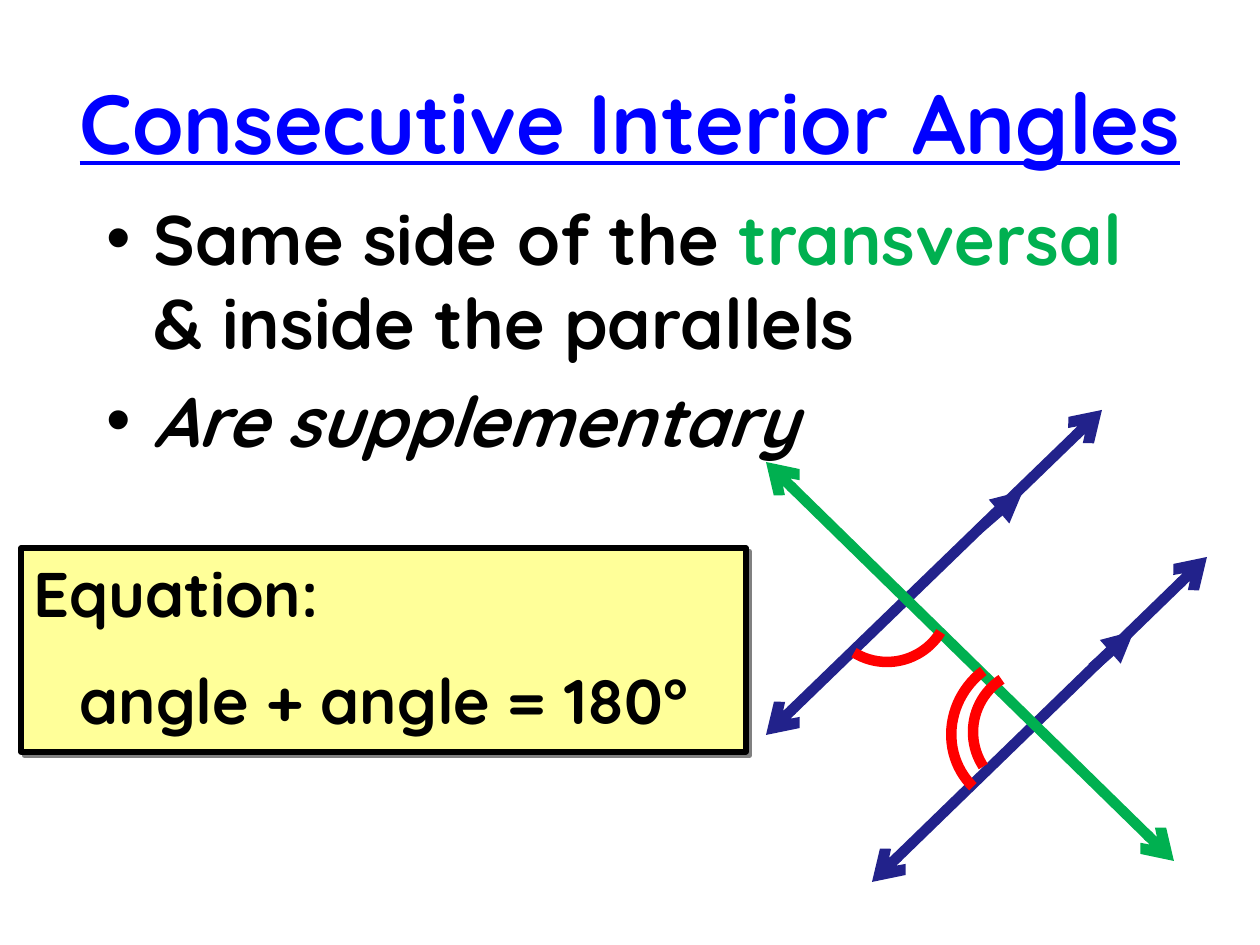
from lxml.etree import SubElement
from pptx import Presentation
from pptx.dml.color import RGBColor
from pptx.enum.shapes import MSO_CONNECTOR, MSO_SHAPE
from pptx.enum.text import MSO_ANCHOR, MSO_AUTO_SIZE, PP_ALIGN
from pptx.oxml.ns import qn
from pptx.util import Pt

PX = 914400 // 126
COLORS = {"title": "0000FF", "text": "000000", "transversal": "00B050",
          "parallel": "22228B", "angle": "FF0000", "panel": "FFFF99",
          "shadow": "808080"}


def add_para(frame, *spans, size, color="text", align=PP_ALIGN.LEFT, before=0,
             italic=False, underline=False, bullet=False):
    """Fill the first empty paragraph or add one; spans are (text, color) or text."""
    para = frame.paragraphs[0]
    if para.runs:
        para = frame.add_paragraph()
    para.alignment = align
    para.space_before = Pt(before)
    if bullet:
        props = para._p.get_or_add_pPr()
        props.set("marL", str(47 * PX))
        props.set("indent", str(-47 * PX))
        SubElement(props, qn("a:buFont"), typeface="Arial")
        SubElement(props, qn("a:buChar"), char="•")
    for item in spans:
        text, shade = (item, color) if isinstance(item, str) else item
        span = para.add_run()
        span.text = text
        font = span.font
        font.name, font.size, font.bold = "Quicksand", Pt(size), True
        font.italic, font.underline = italic, underline
        font.color.rgb = RGBColor.from_string(COLORS[shade])


def style_line(line, color, width):
    line.color.rgb = RGBColor.from_string(COLORS[color])
    line.width = Pt(width)


deck = Presentation()
deck.slide_width, deck.slide_height = 1260 * PX, 945 * PX
page = deck.slides.add_slide(deck.slide_layouts[6])
shapes = page.shapes

# Title and bullet points
title = shapes.add_textbox(0, 0, 1260 * PX, 242 * PX).text_frame
title.word_wrap = True
title.vertical_anchor = MSO_ANCHOR.MIDDLE
add_para(title, "Consecutive Interior Angles", size=48, color="title",
         align=PP_ALIGN.CENTER, underline=True)

body = shapes.add_textbox(94 * PX, 189 * PX, 1071 * PX, 368 * PX).text_frame
body.word_wrap = True
add_para(body, "Same side of the ", ("transversal ", "transversal"),
         "& inside the parallels", size=40, before=8, bullet=True)
add_para(body, "Are supplementary", size=40, before=8, italic=True, bullet=True)

# Equation panel with a hard shadow
panel = shapes.add_shape(MSO_SHAPE.RECTANGLE, 21 * PX, 548 * PX, 725 * PX, 204 * PX)
panel.fill.solid()
panel.fill.fore_color.rgb = RGBColor.from_string(COLORS["panel"])
style_line(panel.line, "text", 3)
panel.shadow.inherit = False
effects = panel._element.spPr.find(qn("a:effectLst"))
shadow = SubElement(effects, qn("a:outerShdw"), blurRad="0", dist=str(Pt(2.8)),
                    dir=str(45 * 60000), algn="ctr", rotWithShape="0")
SubElement(shadow, qn("a:srgbClr"), val=COLORS["shadow"])
equation = panel.text_frame
equation.word_wrap = True
equation.auto_size = MSO_AUTO_SIZE.SHAPE_TO_FIT_TEXT
equation.vertical_anchor = MSO_ANCHOR.TOP
add_para(equation, "Equation:", size=36, before=18)
add_para(equation, "angle + angle = 180°", size=36, before=18, align=PP_ALIGN.CENTER)

# Two parallels, the transversal, then the marks that show the lines are parallel
both_ends = {"headEnd": "arrow", "tailEnd": "arrow"}
parallel_mark = {"headEnd": "triangle"}
for color, start_x, start_y, end_x, end_y, arrowheads in [
    ("parallel", 1102, 410, 766, 735, both_ends),
    ("parallel", 1207, 557, 872, 882, both_ends),
    ("transversal", 766, 462, 1174, 861, both_ends),
    ("parallel", 1023, 491, 980, 528, parallel_mark),
    ("parallel", 1134, 631, 1092, 668, parallel_mark),
]:
    ray = shapes.add_connector(MSO_CONNECTOR.STRAIGHT, start_x * PX, start_y * PX,
                               end_x * PX, end_y * PX)
    style_line(ray.line, color, 6)
    for end, kind in arrowheads.items():
        SubElement(ray.line._get_or_add_ln(), qn(f"a:{end}"), type=kind)
    SubElement(ray._element.spPr, qn("a:effectLst"))

# Angle arcs: one single, one double
for left, top, width, height, rotation, adjustments in [
    (973, 669, 126, 126, 236.8, []),
    (824, 536, 126, 126, 121.6, []),
    (953, 653, 149, 156, 224.5, [161.94, 5.49]),
]:
    arc = shapes.add_shape(MSO_SHAPE.ARC, left * PX, top * PX, width * PX, height * PX)
    arc.rotation = rotation
    for index, value in enumerate(adjustments):
        arc.adjustments[index] = value
    arc.fill.background()
    style_line(arc.line, "angle", 6)
    arc.shadow.inherit = False

deck.save("out.pptx")
